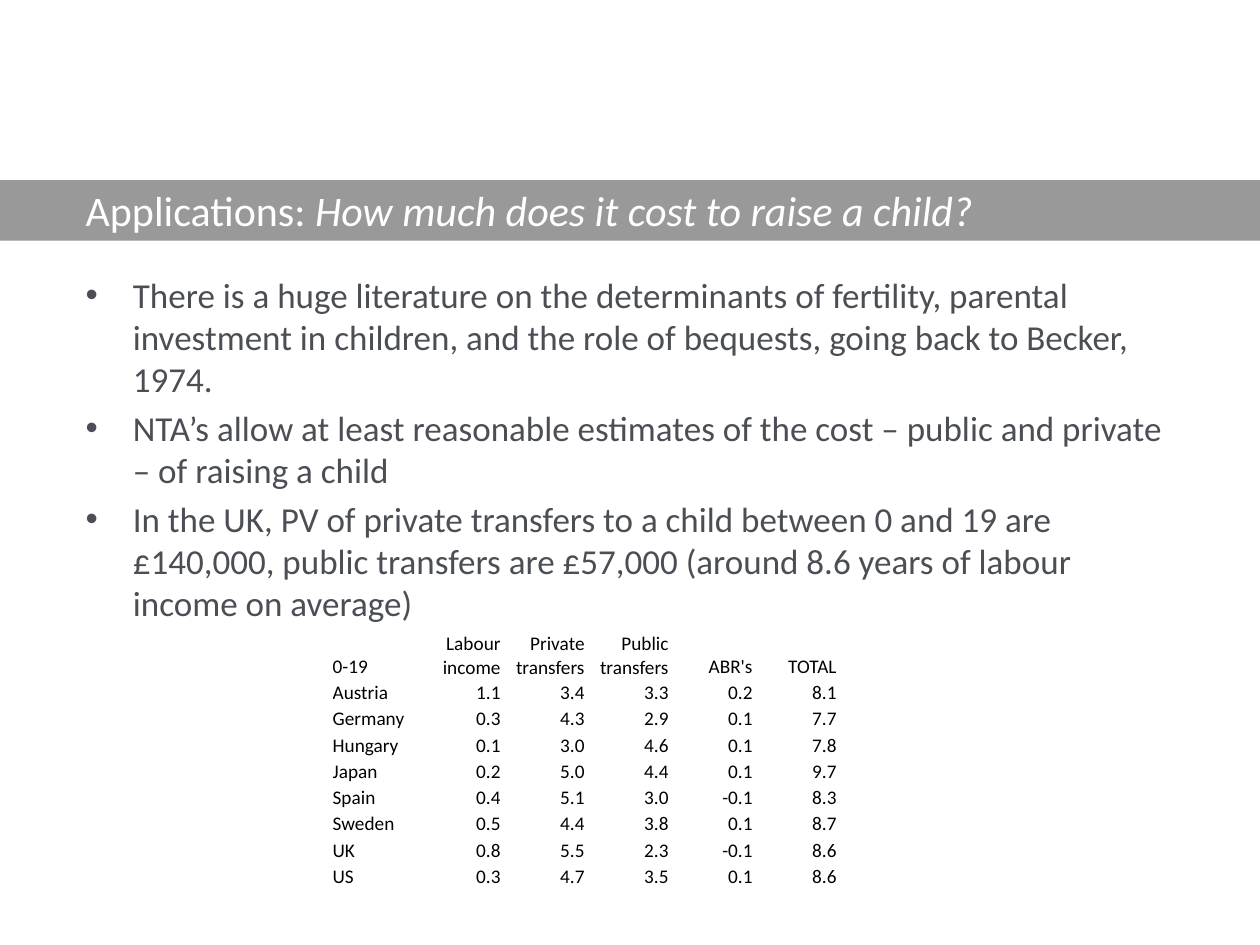
"""Build the slide on the cost of raising a child."""
import pptx
import pptx.dml.color
import pptx.enum.shapes
import pptx.enum.text
import pptx.oxml.ns
import pptx.util
import lxml.etree

COLOURS = {"band": "999999", "title": "FFFFFF", "body": "4B4F55", "table": "000000"}

presentation = pptx.Presentation()
presentation.slide_width = pptx.util.Inches(10)
presentation.slide_height = pptx.util.Inches(7.5)
slide = presentation.slides.add_slide(presentation.slide_layouts[6])


def area(left, top, width, height):
    """Turn percentages of the slide's size into lengths."""
    across, down = presentation.slide_width / 100, presentation.slide_height / 100
    return [int(left * across), int(top * down), int(width * across), int(height * down)]


def add_run(paragraph, text, size, colour, italic=None):
    """Append one formatted run to a paragraph."""
    run = paragraph.add_run()
    run.text = text
    run.font.name = "Calibri"
    run.font.size = pptx.util.Pt(size)
    run.font.italic = italic
    run.font.color.rgb = pptx.dml.color.RGBColor.from_string(COLOURS[colour])


band = slide.shapes.add_shape(
    pptx.enum.shapes.MSO_SHAPE.RECTANGLE, *area(0, 19.07, 100, 6.4)
)
band.shadow.inherit = False
band.fill.solid()
band.fill.fore_color.rgb = pptx.dml.color.RGBColor.from_string(COLOURS["band"])
band.line.fill.background()

title = slide.shapes.add_textbox(*area(6.8, 18.93, 86.4, 6.53)).text_frame
body = slide.shapes.add_textbox(*area(6.8, 28.93, 86.4, 61.6)).text_frame
for frame in (title, body):
    frame.word_wrap = True
    frame.margin_left = frame.margin_right = frame.margin_top = frame.margin_bottom = 0

title.vertical_anchor = pptx.enum.text.MSO_ANCHOR.MIDDLE
add_run(title.paragraphs[0], "Applications: ", 24, "title")
add_run(title.paragraphs[0], "How much does it cost to raise a child?", 24, "title", True)

points = [
    "There is a huge literature on the determinants of fertility, parental investment in "
    "children, and the role of bequests, going back to Becker, 1974.",
    "NTA’s allow at least reasonable estimates of the cost – public and private – of "
    "raising a child",
    "In the UK, PV of private transfers to a child between 0 and 19 are £140,000, public "
    "transfers are £57,000 (around 8.6 years of labour income on average)",
]
indent = area(3.75, 0, 0, 0)[0]
for number, point in enumerate(points):
    paragraph = body.add_paragraph() if number else body.paragraphs[0]
    properties = paragraph._p.get_or_add_pPr()
    properties.set("marL", str(indent))
    properties.set("indent", str(-indent))
    font = lxml.etree.SubElement(properties, pptx.oxml.ns.qn("a:buFont"))
    font.set("typeface", "Arial")
    bullet = lxml.etree.SubElement(properties, pptx.oxml.ns.qn("a:buChar"))
    bullet.set("char", "•")
    if number:
        paragraph.space_before = pptx.util.Pt(4)
    add_run(paragraph, point, 20, "body")

rows = [
    ["0-19", "Labour income", "Private transfers", "Public transfers", "ABR's", "TOTAL"],
    ["Austria", "1.1", "3.4", "3.3", "0.2", "8.1"],
    ["Germany", "0.3", "4.3", "2.9", "0.1", "7.7"],
    ["Hungary", "0.1", "3.0", "4.6", "0.1", "7.8"],
    ["Japan", "0.2", "5.0", "4.4", "0.1", "9.7"],
    ["Spain", "0.4", "5.1", "3.0", "-0.1", "8.3"],
    ["Sweden", "0.5", "4.4", "3.8", "0.1", "8.7"],
    ["UK", "0.8", "5.5", "2.3", "-0.1", "8.6"],
    ["US", "0.3", "4.7", "3.5", "0.1", "8.6"],
]
table = slide.shapes.add_table(
    len(rows), len(rows[0]), *area(26.4, 66.93, 40, 25)
).table
table.first_row = table.horz_banding = False
for row_number, row in enumerate(rows):
    for column_number, text in enumerate(row):
        cell = table.cell(row_number, column_number)
        cell.fill.background()
        cell.margin_left = cell.margin_right = cell.margin_top = cell.margin_bottom = 0
        cell.vertical_anchor = pptx.enum.text.MSO_ANCHOR.BOTTOM
        paragraph = cell.text_frame.paragraphs[0]
        if column_number:
            paragraph.alignment = pptx.enum.text.PP_ALIGN.RIGHT
        add_run(paragraph, text, 11, "table")

presentation.save("out.pptx")
